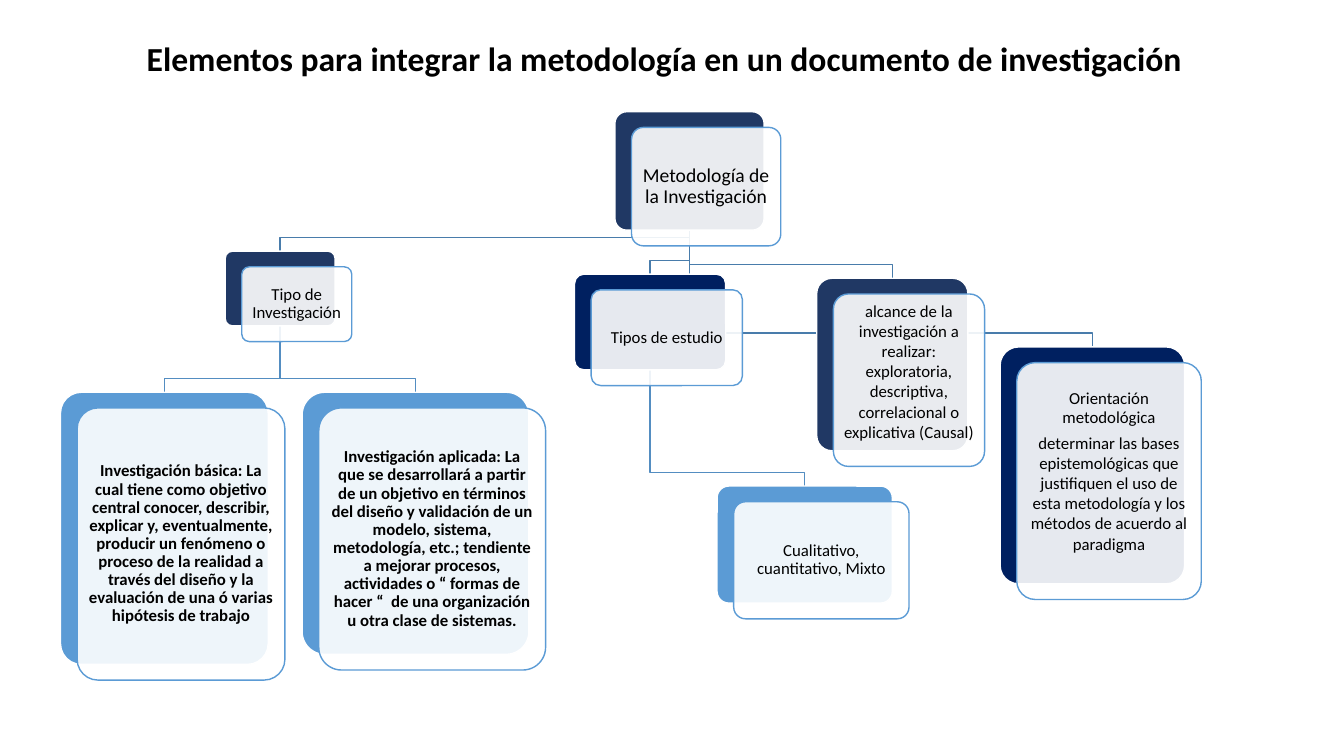
from dataclasses import dataclass

from pptx import Presentation
from pptx.dml.color import RGBColor
from pptx.enum.shapes import MSO_SHAPE as Shape
from pptx.enum.text import MSO_ANCHOR as Anchor, MSO_AUTO_SIZE as AutoSize, PP_ALIGN as Align
from pptx.oxml.ns import qn
from pptx.util import Pt

# Content
TITLE = "Elementos para integrar la metodología en un documento de investigación"


@dataclass
class Node:
    parent: str
    box: tuple  # left, top, width, height of the back card
    color: str
    text: str
    size: int = 12
    bold: bool = False
    detail: str = ""
    loose: bool = False  # full line spacing
    lift: float = 0  # extra space below the text


NODES = {
    "metodología": Node(
        "", (439.2, 79.8, 106.6, 84.6), "navy", "Metodología de la Investigación", size=14),
    "tipo": Node(
        "metodología", (160.8, 179.4, 78.6, 53.4), "navy", "Tipo de Investigación"),
    "básica": Node(
        "tipo", (43.2, 280.2, 148.4, 194.4), "sky",
        "Investigación básica: La cual tiene como objetivo central conocer, describir, "
        "explicar y, eventualmente, producir un fenómeno o proceso de la realidad a través "
        "del diseño y la evaluación de una ó varias hipótesis de trabajo", bold=True),
    "aplicada": Node(
        "tipo", (215.8, 280.2, 162, 187.2), "sky",
        "Investigación aplicada: La que se desarrollará a partir de un objetivo en términos "
        "del diseño y validación de un modelo, sistema, metodología, etc.; tendiente a "
        "mejorar procesos, actividades o “ formas de hacer “  de una organización u otra "
        "clase de sistemas.", bold=True),
    "estudio": Node(
        "metodología", (410.4, 195.8, 108, 68.4), "deep", "Tipos de estudio"),
    "enfoque": Node(
        "estudio", (512.2, 347.2, 125.2, 83.6), "sky", "Cualitativo, cuantitativo, Mixto"),
    "alcance": Node(
        "metodología", (583.4, 198.8, 108, 123.2), "navy",
        "alcance de la investigación a realizar: exploratoria, descriptiva, correlacional "
        "o explicativa (Causal)", loose=True, lift=13),
    "orientación": Node(
        "metodología", (714.4, 247.8, 131.8, 169.2), "deep", "Orientación metodológica",
        detail="determinar las bases epistemológicas que justifiquen el uso de esta "
               "metodología y los métodos de acuerdo al paradigma", lift=13),
}


@dataclass(frozen=True)
class Theme:
    font: str = "Calibri"
    title_size: int = 24
    text: str = "000000"
    white: str = "FFFFFF"
    navy: str = "203864"
    deep: str = "002060"
    sky: str = "5B9BD5"
    first_link: str = "497CAB"
    second_link: str = "538DC1"


THEME = Theme()
ROOT = "metodología"
SHIFT_X, SHIFT_Y = 11.9, 11.2  # front card against back card
BEND = 9.8  # height of the last leg of a link
INSET = 3.6


def rgb(value):
    return RGBColor.from_string(value)


def add_text(para, text, size, bold=False, spacing=0.9):
    para.alignment = Align.CENTER
    para.line_spacing = spacing
    span = para.add_run()
    span.text = text
    span.font.name = THEME.font
    span.font.size = Pt(size)
    span.font.bold = bold
    span.font.color.rgb = rgb(THEME.text)


def add_link(page, parent, child):
    left, top, width, height = parent.box
    start_x, start_y = left + width / 2, top + height
    left, top, width, height = child.box
    end_x, bend_y = left + width / 2, top - BEND
    builder = page.shapes.build_freeform(Pt(start_x), Pt(start_y))
    corners = [(start_x, bend_y), (end_x, bend_y), (end_x, top)]
    builder.add_line_segments([(Pt(x), Pt(y)) for x, y in corners], close=False)
    link = builder.convert_to_shape()
    link.shadow.inherit = False
    link.fill.background()
    color = THEME.first_link if child.parent == ROOT else THEME.second_link
    link.line.color.rgb = rgb(color)
    link.line.width = Pt(1)


def add_card(page, box, fill, line):
    card = page.shapes.add_shape(Shape.ROUNDED_RECTANGLE, *(Pt(v) for v in box))
    card.adjustments[0] = 0.1
    card.shadow.inherit = False
    card.fill.solid()
    card.fill.fore_color.rgb = rgb(fill)
    card.line.color.rgb = rgb(line)
    card.line.width = Pt(1)
    return card


def add_node(page, node):
    left, top, width, height = node.box
    add_card(page, node.box, getattr(THEME, node.color), THEME.white)
    front = add_card(page, (left + SHIFT_X, top + SHIFT_Y, width, height),
                     THEME.white, THEME.sky)
    # Front card at 90 % opacity
    tint = front.fill._xPr.find(qn("a:solidFill"))[0]
    tint.makeelement(qn("a:alpha"), {"val": "90000"})
    tint.append(tint.makeelement(qn("a:alpha"), {"val": "90000"}))

    frame = front.text_frame
    frame.word_wrap = True
    frame.vertical_anchor = Anchor.MIDDLE
    frame.margin_left = frame.margin_right = Pt(INSET)
    frame.margin_top = Pt(0 if node.lift else INSET)
    frame.margin_bottom = Pt(node.lift or INSET)
    para = frame.paragraphs[0]
    add_text(para, node.text, node.size, node.bold, 1.0 if node.loose else 0.9)
    if node.detail:
        para.space_after = Pt(4.2)
        add_text(frame.add_paragraph(), node.detail, node.size, spacing=1.0)


def main():
    deck = Presentation()
    deck.slide_width, deck.slide_height = Pt(960), Pt(540)
    page = deck.slides.add_slide(deck.slide_layouts[5])

    # Title
    title = page.shapes.title
    title.left, title.top, title.width, title.height = Pt(96.5), Pt(13), Pt(756), Pt(60)
    title.text_frame.word_wrap = True
    title.text_frame.auto_size = AutoSize.NONE
    title.text_frame.vertical_anchor = Anchor.MIDDLE
    add_text(title.text_frame.paragraphs[0], TITLE, THEME.title_size, bold=True)

    # Links lie behind the cards
    for node in NODES.values():
        if node.parent:
            add_link(page, NODES[node.parent], node)

    # Cards
    for node in NODES.values():
        add_node(page, node)

    deck.save("out.pptx")


if __name__ == "__main__":
    main()
